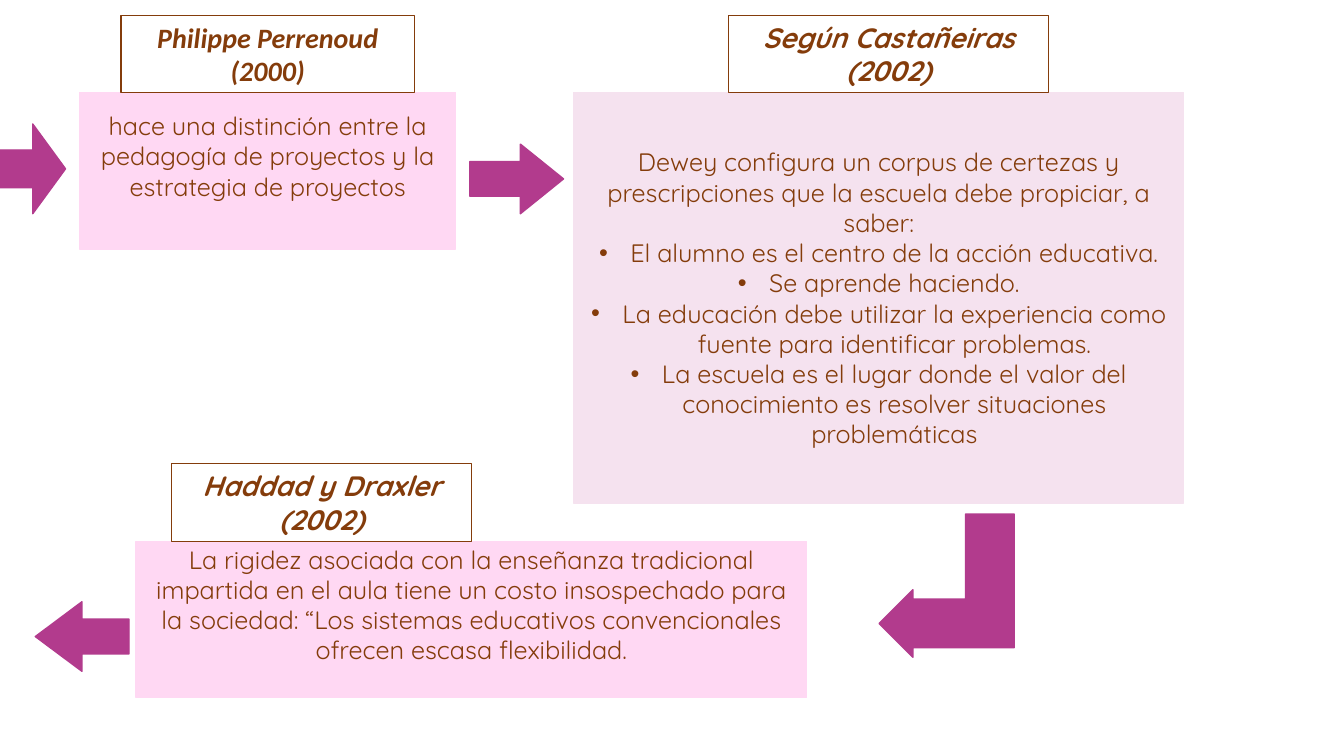
from dataclasses import dataclass

from lxml import etree
from pptx import Presentation
from pptx.dml.color import RGBColor
from pptx.enum import shapes, text
from pptx.oxml.ns import qn
from pptx.util import Inches, Pt

SHAPE = shapes.MSO_SHAPE


@dataclass(frozen=True)
class Theme:
    ink: str = "843C0B"
    pink: str = "FFD8F3"
    mauve: str = "F5E2EF"
    arrow: str = "B23B8D"
    body_font: str = "Quicksand"
    alt_font: str = "Calibri"
    body_size: int = 18
    heading_size: int = 20


THEME = Theme()
Box = tuple[float, float, float, float]


@dataclass(frozen=True)
class Author:
    heading: str
    heading_box: Box
    body: str
    body_box: Box
    fill: str = THEME.pink
    font: str = THEME.body_font
    bullets: tuple[str, ...] = ()
    bottom: float = 0.35


@dataclass(frozen=True)
class Arrow:
    box: Box
    adjustments: tuple[float, ...]
    kind: SHAPE = SHAPE.RIGHT_ARROW
    rotation: int = 0
    flip: bool = False


AUTHORS = (
    Author("Philippe Perrenoud (2000)", (1.2, 0.15, 2.91, 0.77),
           "hace una distinción entre la pedagogía de proyectos y la "
           "estrategia de proyectos",
           (0.79, 0.92, 3.73, 1.55), font=THEME.alt_font),
    Author("Según Castañeiras (2002)", (7.23, 0.15, 3.17, 0.77),
           "Dewey configura un corpus de certezas y prescripciones que la "
           "escuela debe propiciar, a saber:",
           (5.69, 0.92, 6.05, 4.07), fill=THEME.mauve, bottom=0.05,
           bullets=(
               "El alumno es el centro de la acción educativa.",
               "Se aprende haciendo.",
               "La educación debe utilizar la experiencia como fuente para "
               "identificar problemas.",
               "La escuela es el lugar donde el valor del conocimiento es "
               "resolver situaciones problemáticas")),
    Author("Haddad y Draxler (2002)", (1.7, 4.6, 2.98, 0.77),
           "La rigidez asociada con la enseñanza tradicional impartida en el "
           "aula tiene un costo insospechado para la sociedad: “Los sistemas "
           "educativos convencionales ofrecen escasa flexibilidad.",
           (1.35, 5.37, 6.65, 1.55)),
)

ARROWS = (
    Arrow((0, 1.23, 0.65, 0.89), (0.42, 0.5)),
    Arrow((4.66, 1.43, 0.93, 0.69), (0.5, 0.62)),
    Arrow((8.68, 5.14, 1.42, 1.34), (0.36, 0.25, 0.25),
          SHAPE.BENT_UP_ARROW, rotation=270, flip=True),
    Arrow((0.35, 5.97, 0.93, 0.69), (0.5, 0.67), rotation=180),
)


def add_shape(slide, kind: SHAPE, box: Box, line: str, fill: str | None = None,
              width: float = 1):
    sp = slide.shapes.add_shape(kind, *map(Inches, box))
    sp.shadow.inherit = False
    if fill:
        sp.fill.solid()
        sp.fill.fore_color.rgb = RGBColor.from_string(fill)
    else:
        sp.fill.background()
    sp.line.color.rgb = RGBColor.from_string(line)
    sp.line.width = Pt(width)
    return sp


def write(p, content: str, *, font: str = THEME.body_font,
          size: int = THEME.body_size, strong: bool = False,
          bullet: bool = False) -> None:
    p.alignment = text.PP_ALIGN.CENTER
    r = p.add_run()
    r.text = content
    r.font.name = font
    r.font.size = Pt(size)
    r.font.bold = r.font.italic = strong
    r.font.color.rgb = RGBColor.from_string(THEME.ink)
    if bullet:
        pPr = p._p.get_or_add_pPr()
        pPr.set("marL", str(Inches(0.31)))
        pPr.set("indent", str(-Inches(0.31)))
        etree.SubElement(pPr, qn("a:buFont"), typeface="Arial")
        etree.SubElement(pPr, qn("a:buChar"), char="•")


def add_author(slide, author: Author) -> None:
    tf = add_shape(slide, SHAPE.RECTANGLE, author.body_box,
                   author.fill, author.fill).text_frame
    tf.word_wrap = True
    tf.vertical_anchor = text.MSO_ANCHOR.MIDDLE
    tf.margin_bottom = Inches(author.bottom)
    write(tf.paragraphs[0], author.body)
    for item in author.bullets:
        write(tf.add_paragraph(), item, bullet=True)

    tf = add_shape(slide, SHAPE.RECTANGLE, author.heading_box,
                   THEME.ink, width=0.75).text_frame
    tf.word_wrap = True
    tf.vertical_anchor = text.MSO_ANCHOR.TOP
    write(tf.paragraphs[0], author.heading, font=author.font,
          size=THEME.heading_size, strong=True)


def add_arrow(slide, arrow: Arrow) -> None:
    sp = add_shape(slide, arrow.kind, arrow.box, THEME.arrow, THEME.arrow)
    for i, value in enumerate(arrow.adjustments):
        sp.adjustments[i] = value
    sp.rotation = arrow.rotation
    if arrow.flip:
        sp._element.spPr.find(qn("a:xfrm")).set("flipH", "1")


def main() -> None:
    prs = Presentation()
    prs.slide_width, prs.slide_height = Inches(13.33), Inches(7.5)
    slide = prs.slides.add_slide(prs.slide_layouts.get_by_name("Blank"))
    for author in AUTHORS:
        add_author(slide, author)
    for arrow in ARROWS:
        add_arrow(slide, arrow)
    prs.save("out.pptx")


if __name__ == "__main__":
    main()
